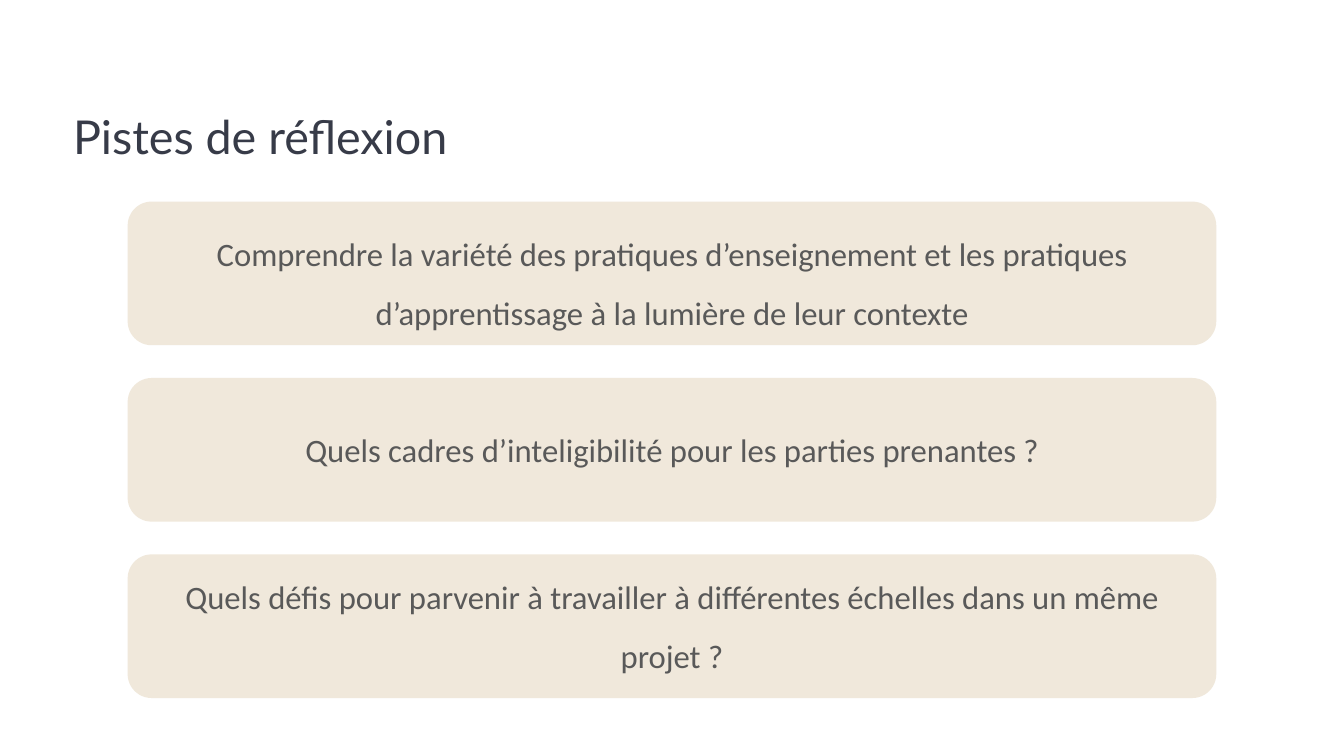
from lxml.etree import SubElement
from pptx import Presentation
from pptx.dml.color import RGBColor
from pptx.enum.shapes import MSO_SHAPE as Shape
from pptx.enum.text import MSO_ANCHOR as Anchor, MSO_AUTO_SIZE as AutoSize, PP_ALIGN as Align
from pptx.oxml.ns import qn
from pptx.util import Pt

PX = 9144  # 100 px to the inch
COLOURS = {"title": "373B48", "text": "595959", "card": "EADFCD"}
QUESTIONS = [
    "Comprendre la variété des pratiques d’enseignement et les pratiques "
    "d’apprentissage à la lumière de leur contexte",
    "Quels cadres d’inteligibilité pour les parties prenantes ?",
    "Quels défis pour parvenir à travailler à différentes échelles dans un même projet ?",
]


class SlideBuilder:
    def __init__(self, deck):
        self.slide = deck.slides.add_slide(deck.slide_layouts[5])

    def set_text(self, frame, text, font, size, colour, align, spacing, anchor, insets):
        """Set one paragraph; insets are left, top, right, bottom in px."""
        frame.text = text
        frame.word_wrap = True
        frame.auto_size = AutoSize.NONE
        frame.vertical_anchor = anchor
        (frame.margin_left, frame.margin_top,
         frame.margin_right, frame.margin_bottom) = [inset * PX for inset in insets]
        para = frame.paragraphs[0]
        para.alignment = align
        para.line_spacing = spacing
        para.space_before = Pt(0)
        span = para.runs[0]
        span.font.name = font
        span.font.size = Pt(size)
        span.font.color.rgb = RGBColor.from_string(COLOURS[colour])

    def title(self, text, left, top, width, height):
        title = self.slide.shapes.title
        title.left, title.top = left * PX, top * PX
        title.width, title.height = width * PX, height * PX
        self.set_text(title.text_frame, text, "Lato", 40, "title",
                      Align.LEFT, Pt(55.5), Anchor.TOP, (0, 0, 0, 0))

    def card(self, text, left, top, width, height, insets):
        box = self.slide.shapes.add_shape(
            Shape.ROUNDED_RECTANGLE, left * PX, top * PX, width * PX, height * PX)
        box.shadow.inherit = False
        box.line.fill.background()
        box.fill.solid()
        box.fill.fore_color.rgb = RGBColor.from_string(COLOURS["card"])
        colour = box.element.spPr.find(qn("a:solidFill"))[0]
        SubElement(colour, qn("a:alpha"), val="71000")
        self.set_text(box.text_frame, text, "Calibri", 28, "text",
                      Align.CENTER, 1.5, Anchor.MIDDLE, insets)


def main():
    deck = Presentation()
    deck.slide_width, deck.slide_height = 1600 * PX, 900 * PX
    builder = SlideBuilder(deck)
    builder.title("Pistes de réflexion", 87, 118, 1002, 78)
    for row, question in enumerate(QUESTIONS):
        insets = (10, 5, 10, 5) if row == 0 else (10, 0, 10, 24)
        builder.card(question, 152, 240 + 210 * row, 1296, 171, insets)
    deck.save("out.pptx")


if __name__ == "__main__":
    main()
